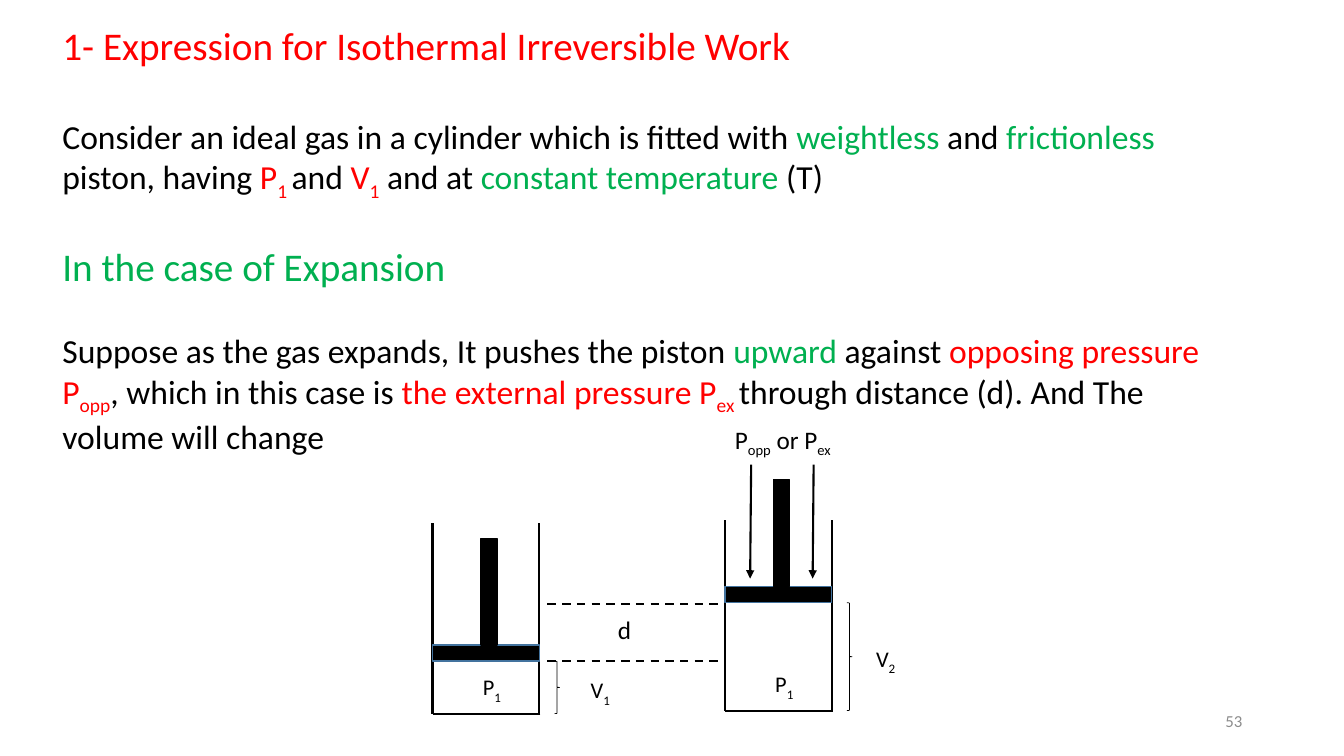
import lxml.etree
import pptx
import pptx.dml.color
import pptx.enum.dml
import pptx.enum.shapes
import pptx.enum.text
import pptx.oxml.ns
import pptx.util

BLACK = pptx.dml.color.RGBColor(0x00, 0x00, 0x00)
WHITE = pptx.dml.color.RGBColor(0xFF, 0xFF, 0xFF)
RED = pptx.dml.color.RGBColor(0xFF, 0x00, 0x00)
GREEN = pptx.dml.color.RGBColor(0x00, 0xB0, 0x50)
BLUE = pptx.dml.color.RGBColor(0x43, 0x73, 0x9E)
GRAY = pptx.dml.color.RGBColor(0x8C, 0x8C, 0x8C)

SHAPES = pptx.enum.shapes.MSO_SHAPE
ANCHOR = pptx.enum.text.MSO_ANCHOR
ALIGN = pptx.enum.text.PP_ALIGN
EMU_PER_PX = 9144
FONT = "Calibri"
PLATE = 16
BORE = 106


def px(*lengths):
    return [pptx.util.Emu(length * EMU_PER_PX) for length in lengths]


class SlideBuilder:
    def __init__(self, slide):
        self.shapes = slide.shapes

    def add_runs(self, paragraph, runs, size, subscript=-25):
        for text, color, lowered in runs:
            run = paragraph.add_run()
            run.text = text
            run.font.name = FONT
            run.font.size = pptx.util.Pt(size)
            run.font.color.rgb = color
            if lowered:
                run.font._element.set("baseline", str(subscript * 1000))

    def text(self, box, paragraphs, wrap=True, anchor=ANCHOR.TOP, align=ALIGN.LEFT):
        frame = self.shapes.add_textbox(*px(*box)).text_frame
        frame.word_wrap = wrap
        frame.vertical_anchor = anchor
        for index, (size, gap, runs) in enumerate(paragraphs):
            paragraph = frame.add_paragraph() if index else frame.paragraphs[0]
            paragraph.alignment = align
            if gap:
                paragraph.space_before = pptx.util.Pt(gap)
            self.add_runs(paragraph, runs, size)

    def shape(self, kind, box, fill=None, line=None, width=1):
        shape = self.shapes.add_shape(kind, *px(*box))
        shape.shadow.inherit = False
        if fill is None:
            shape.fill.background()
        else:
            shape.fill.solid()
            shape.fill.fore_color.rgb = fill
        if line is None:
            shape.line.fill.background()
        else:
            shape.line.color.rgb = line
            shape.line.width = pptx.util.Pt(width)
        return shape

    def label(self, left, top, letter, index):
        frame = self.shape(SHAPES.RECTANGLE, (left, top, 49, 43), WHITE).text_frame
        frame.word_wrap = True
        frame.vertical_anchor = ANCHOR.MIDDLE
        frame.paragraphs[0].alignment = ALIGN.LEFT
        runs = [(letter, BLACK, False), (index, BLACK, True)]
        self.add_runs(frame.paragraphs[0], runs, 16, -30)

    def line(self, start, end, dashed=False, arrow=False):
        connector = self.shapes.add_connector(
            pptx.enum.shapes.MSO_CONNECTOR.STRAIGHT, *px(*start, *end))
        connector.line.color.rgb = BLACK
        connector.line.width = pptx.util.Pt(1.5)
        if dashed:
            connector.line.dash_style = pptx.enum.dml.MSO_LINE.DASH
        properties = connector._element.spPr
        if arrow:
            outline = properties.find(pptx.oxml.ns.qn("a:ln"))
            lxml.etree.SubElement(
                outline, pptx.oxml.ns.qn("a:tailEnd"), type="triangle")
        lxml.etree.SubElement(properties, pptx.oxml.ns.qn("a:effectLst"))

    def cylinder(self, left, top, piston_top):
        right, base = left + BORE, top + 189
        gas_top = piston_top + PLATE
        self.line((left, top), (left, base))
        self.line((right + 1, base), (left, base))
        self.line((right, top), (right, base))
        self.shape(SHAPES.RECTANGLE, (left, piston_top, BORE, PLATE), BLACK, BLUE)
        self.shape(SHAPES.RECTANGLE,
                   (left + 48, piston_top - BORE, PLATE, BORE), BLACK, BLACK)
        self.shape(SHAPES.RIGHT_BRACE,
                   (left + 121, gas_top, 5, base - gas_top), line=BLACK, width=0.5)
        self.label(left + 40, base - 46, "P", "1")


def main():
    presentation = pptx.Presentation()
    presentation.slide_width, presentation.slide_height = px(1333, 750)
    builder = SlideBuilder(presentation.slides.add_slide(presentation.slide_layouts[6]))

    gas = [
        ("Consider an ideal gas in a cylinder which is fitted with ", BLACK, False),
        ("weightless", GREEN, False),
        (" and ", BLACK, False),
        ("frictionless ", GREEN, False),
        ("piston, having", BLACK, False),
        (" P", RED, False),
        ("1 ", RED, True),
        ("and ", BLACK, False),
        ("V", RED, False),
        ("1", RED, True),
        (" and at ", BLACK, False),
        ("constant temperature ", GREEN, False),
        ("(T)", BLACK, False),
    ]
    expansion = [
        ("Suppose as the gas expands, It pushes the piston ", BLACK, False),
        ("upward", GREEN, False),
        (" against ", BLACK, False),
        ("opposing pressure P", RED, False),
        ("opp", RED, True),
        (", which in this case is ", BLACK, False),
        ("the external pressure P", RED, False),
        ("ex ", RED, True),
        ("through distance (d). And The volume will change", BLACK, False),
    ]
    title = [("1- Expression for Isothermal Irreversible Work", RED, False)]
    heading = [("In the case of Expansion", GREEN, False)]
    builder.text((52, 16, 1148, 434), [
        (28, 0, title), (24, 34, gas), (28, 29, heading), (24, 29, expansion)])

    builder.cylinder(429, 519, 640)
    builder.label(576, 665, "V", "1")
    builder.cylinder(719, 516, 582)
    builder.label(859, 634, "V", "2")

    for level in (656, 599):
        builder.line((543, level), (714, level), dashed=True)
    builder.text((603, 605, 34, 40), [(18, 0, [("d", BLACK, False)])], wrap=False)

    for pressure_x in (745, 807):
        builder.line((pressure_x, 461), (pressure_x - 1, 574), arrow=True)
    pressure = [("P", BLACK, False), ("opp", BLACK, True),
                (" or P", BLACK, False), ("ex", BLACK, True)]
    builder.text((719, 416, 121, 40), [(18, 0, pressure)], wrap=False)

    builder.text((942, 695, 300, 40), [(12, 0, [("53", GRAY, False)])],
                 anchor=ANCHOR.MIDDLE, align=ALIGN.RIGHT)
    presentation.save("out.pptx")


if __name__ == "__main__":
    main()
